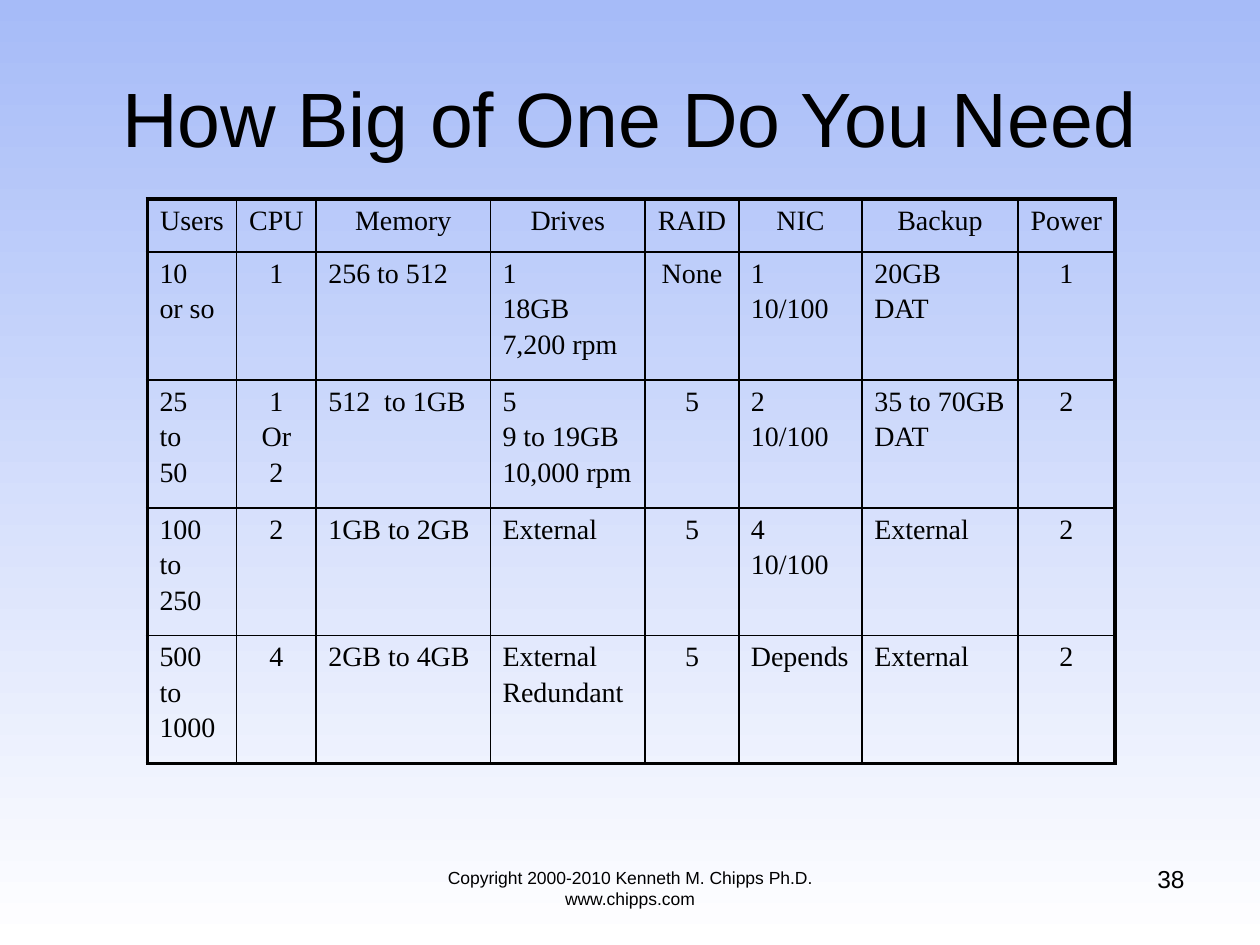
from lxml import etree
from pptx import Presentation
from pptx.dml.color import RGBColor
from pptx.enum import text
from pptx.oxml import ns
from pptx.util import Pt

BLACK = RGBColor(0x00, 0x00, 0x00)
SKY = RGBColor(0xA6, 0xBB, 0xF8)
WHITE = RGBColor(0xFF, 0xFF, 0xFF)
LEFT, CENTER, RIGHT = text.PP_ALIGN.LEFT, text.PP_ALIGN.CENTER, text.PP_ALIGN.RIGHT


def write(frame, lines, align, font_format, space_before=0):
    """Put each line in its own paragraph."""
    for index, line in enumerate(lines):
        paragraph = frame.add_paragraph() if index else frame.paragraphs[0]
        paragraph.alignment = align
        paragraph.space_before = Pt(space_before)
        run = paragraph.add_run()
        run.text = line
        run.font.color.rgb = BLACK
        for name, value in font_format.items():
            setattr(run.font, name, value)


def add_border(cell, position, side, width):
    """Draw one side of a cell; position keeps the sides in schema order."""
    line = etree.Element(ns.qn(f"a:ln{side}"), w=str(Pt(width)))
    fill = etree.SubElement(line, ns.qn("a:solidFill"))
    etree.SubElement(fill, ns.qn("a:srgbClr"), val=str(BLACK))
    cell._tc.get_or_add_tcPr().insert(position, line)


presentation = Presentation()
presentation.slide_width, presentation.slide_height = Pt(720), Pt(540)
slide = presentation.slides.add_slide(presentation.slide_layouts[6])

# Background gradient, top to bottom
background = slide.background.fill
background.gradient()
background.gradient_angle = 270
for stop, color, position in zip(background.gradient_stops, (SKY, WHITE), (0, 1)):
    stop.color.rgb = color
    stop.position = position

# Title, footer and slide number
TOP, MIDDLE = text.MSO_ANCHOR.TOP, text.MSO_ANCHOR.MIDDLE
text_boxes = [
    ("How Big of One Do You Need", (36, 21.6, 648, 90), 44, CENTER, MIDDLE),
    ("Copyright 2000-2010 Kenneth M. Chipps Ph.D. www.chipps.com",
     (216, 491.8, 288, 37.5), 10, CENTER, TOP),
    ("38", (516, 490.3, 168, 37.5), 14, RIGHT, TOP),
]
for words, box, size, align, anchor in text_boxes:
    frame = slide.shapes.add_textbox(*map(Pt, box)).text_frame
    frame.word_wrap = True
    frame.vertical_anchor = anchor
    write(frame, [words], align, {"name": "Arial", "size": Pt(size)})

# Server sizing table; a slash-free "|" parts the paragraphs of a cell
rows = [
    ["Users", "CPU", "Memory", "Drives", "RAID", "NIC", "Backup", "Power"],
    ["10|or so", "1", "256 to 512", "1|18GB|7,200 rpm", "None", "1|10/100",
     "20GB|DAT", "1"],
    ["25|to|50", "1|Or|2", "512  to 1GB", "5|9 to 19GB|10,000 rpm", "5", "2|10/100",
     "35 to 70GB|DAT", "2"],
    ["100|to|250", "2", "1GB to 2GB", "External", "5", "4|10/100", "External", "2"],
    ["500|to|1000", "4", "2GB to 4GB", "External|Redundant", "5", "Depends",
     "External", "2"],
]
column_widths = [51, 45.5, 99.5, 88.5, 53.5, 70.5, 89, 55.5]
row_heights = [30.2] + [73.1] * 4
centered_columns = {"CPU", "RAID", "Power"}
cell_format = {"margin_left": Pt(7), "margin_right": Pt(7),
               "margin_top": Pt(3.6), "margin_bottom": Pt(3.6)}
cell_font = {"name": "Times New Roman", "size": Pt(16)}

table = slide.shapes.add_table(
    len(rows), len(column_widths), Pt(84.2), Pt(113.8),
    Pt(sum(column_widths)), Pt(sum(row_heights))).table
table.first_row = table.horz_banding = False
for column, width in zip(table.columns, column_widths):
    column.width = Pt(width)
for row, height in zip(table.rows, row_heights):
    row.height = Pt(height)

last_row, last_column = len(rows) - 1, len(column_widths) - 1
for r, row in enumerate(rows):
    for c, words in enumerate(row):
        cell = table.cell(r, c)
        cell.fill.background()
        for name, value in cell_format.items():
            setattr(cell, name, value)
        align = CENTER if r == 0 or rows[0][c] in centered_columns else LEFT
        write(cell.text_frame, words.split("|"), align, cell_font, 2.5)
        # Thick outer frame, thin inner grid
        outer_sides = {"L": c == 0, "R": c == last_column,
                       "T": r == 0, "B": r == last_row}
        for position, (side, outer) in enumerate(outer_sides.items()):
            add_border(cell, position, side, 2.25 if outer else 1)

presentation.save("out.pptx")
